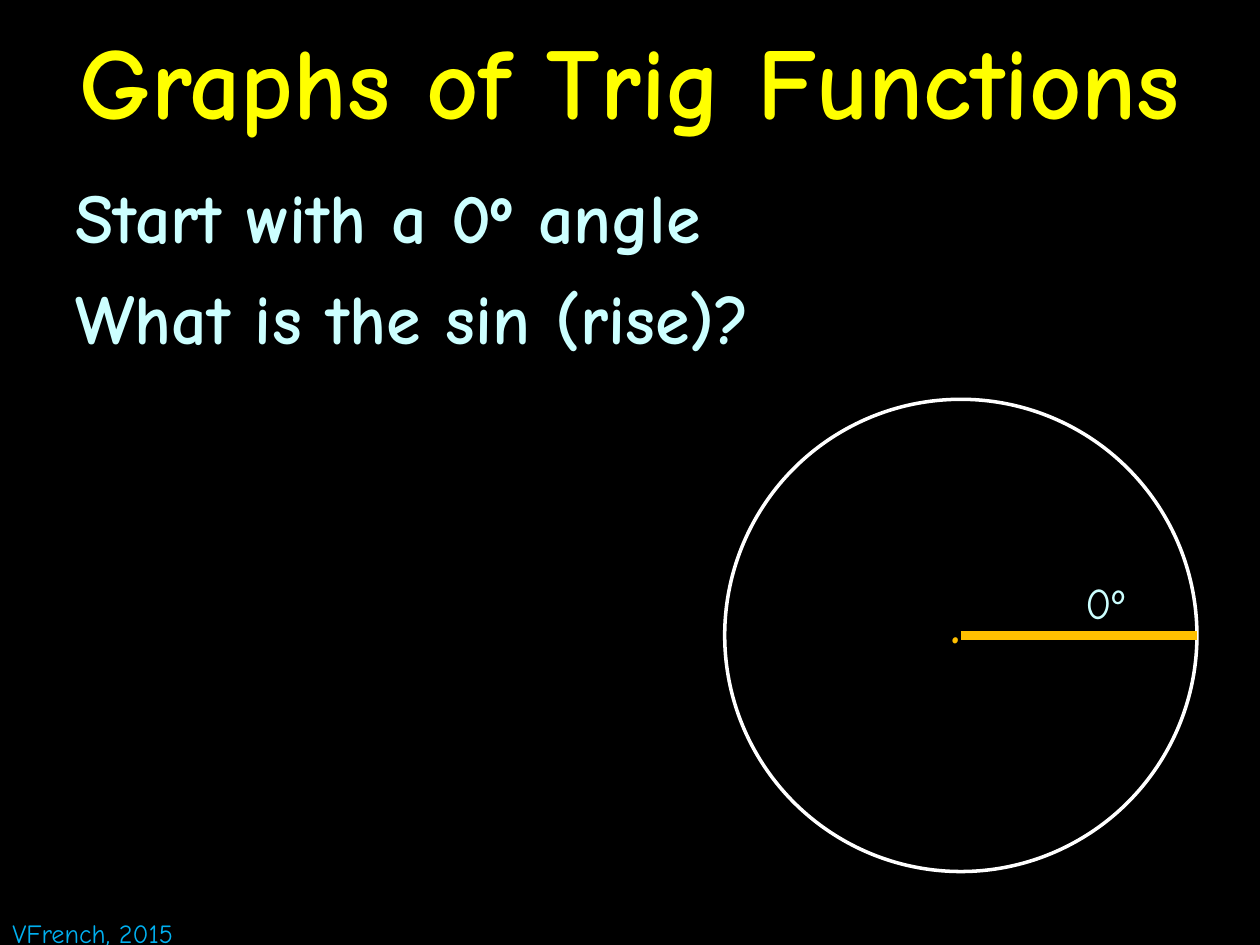
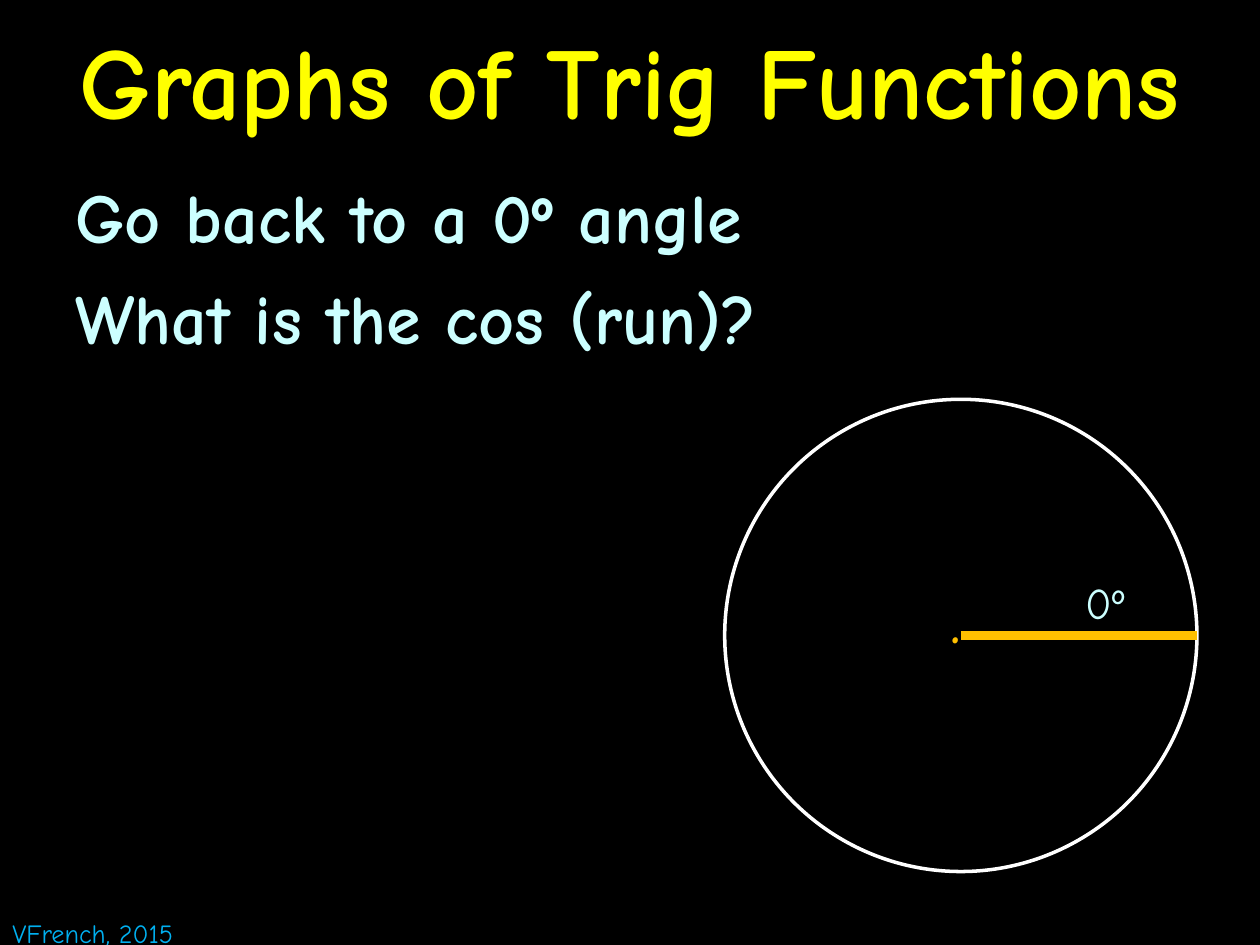
from lxml import etree
from pptx import Presentation
from pptx.dml.color import RGBColor
from pptx.enum.shapes import MSO_CONNECTOR as Connector, MSO_SHAPE as Shape
from pptx.enum.text import MSO_ANCHOR as Anchor, MSO_AUTO_SIZE as AutoSize, PP_ALIGN as Align
from pptx.oxml.ns import qn
from pptx.util import Cm, Pt

FONT = "Comic Neue"
BLACK = RGBColor(0x00, 0x00, 0x00)
WHITE = RGBColor(0xFF, 0xFF, 0xFF)
YELLOW = RGBColor(0xFF, 0xFF, 0x00)
PALE_CYAN = RGBColor(0xCC, 0xFF, 0xFF)
AMBER = RGBColor(0xFF, 0xC0, 0x00)
BLUE = RGBColor(0x00, 0xB0, 0xF0)

TITLE = "Graphs of Trig Functions"
CREDIT = "VFrench, 2015"
PROMPTS = [
    ["Start with a 0º angle", "What is the sin (rise)?"],
    ["Go back to a 0º angle", "What is the cos (run)?"],
]

RADIUS = 4.76
CENTER_X, CENTER_Y = 19.37, 12.81


def style(paragraph, size, color, bold=False):
    font = paragraph.font
    font.name, font.size, font.bold = FONT, Pt(size), bold
    font.color.rgb = color


def add_label(shapes, text, left, top, width, height, size, color, wrap=False):
    frame = shapes.add_textbox(Cm(left), Cm(top), Cm(width), Cm(height)).text_frame
    frame.word_wrap = wrap
    frame.auto_size = AutoSize.SHAPE_TO_FIT_TEXT
    frame.text = text
    style(frame.paragraphs[0], size, color)


prs = Presentation()
prs.slide_width, prs.slide_height = Cm(25.4), Cm(19.05)
background = prs.slide_master.background.fill
background.solid()
background.fore_color.rgb = BLACK

for prompt_lines in PROMPTS:
    slide = prs.slides.add_slide(prs.slide_layouts[1])

    title = slide.shapes.title
    title.left, title.top, title.width, title.height = Cm(0), Cm(0), prs.slide_width, Cm(3.18)
    title.text_frame.text = TITLE
    title.text_frame.auto_size = AutoSize.NONE
    title.text_frame.vertical_anchor = Anchor.MIDDLE
    heading = title.text_frame.paragraphs[0]
    heading.alignment = Align.CENTER
    style(heading, 58, YELLOW, bold=True)

    prompts = slide.placeholders[1]
    prompts.left, prompts.top, prompts.width, prompts.height = Cm(1.27), Cm(3.38), Cm(22.86), Cm(15.67)
    prompts.text_frame.text = "\n".join(prompt_lines)
    prompts.text_frame.auto_size = AutoSize.NONE
    for line in prompts.text_frame.paragraphs:
        line.space_before = Pt(9.6)
        style(line, 40, PALE_CYAN, bold=True)
        properties = line._p.get_or_add_pPr()
        properties.set("marL", "0")
        properties.set("indent", "0")
        etree.SubElement(properties, qn("a:buNone"))

    diagram = slide.shapes.add_group_shape().shapes
    circle = diagram.add_shape(Shape.OVAL, Cm(CENTER_X - RADIUS), Cm(CENTER_Y - RADIUS),
                               Cm(2 * RADIUS), Cm(2 * RADIUS))
    circle.shadow.inherit = False
    circle.fill.background()
    circle.line.color.rgb = WHITE
    circle.line.width = Pt(2)

    add_label(diagram, ".", 18.92, 11.43, 0.86, 1.96, 40, AMBER)
    add_label(diagram, "0º", 21.64, 11.48, 2.36, 1.32, 25, PALE_CYAN, wrap=True)

    angle_arm = diagram.add_connector(Connector.STRAIGHT, Cm(CENTER_X), Cm(CENTER_Y),
                                      Cm(CENTER_X + RADIUS), Cm(CENTER_Y))
    angle_arm.line.color.rgb = AMBER
    angle_arm.line.width = Pt(5)
    etree.SubElement(angle_arm._element.spPr, qn("a:effectLst"))

    add_label(slide.shapes, CREDIT, 0, 18.36, 4.29, 0.89, 15, BLUE)

prs.save("out.pptx")
